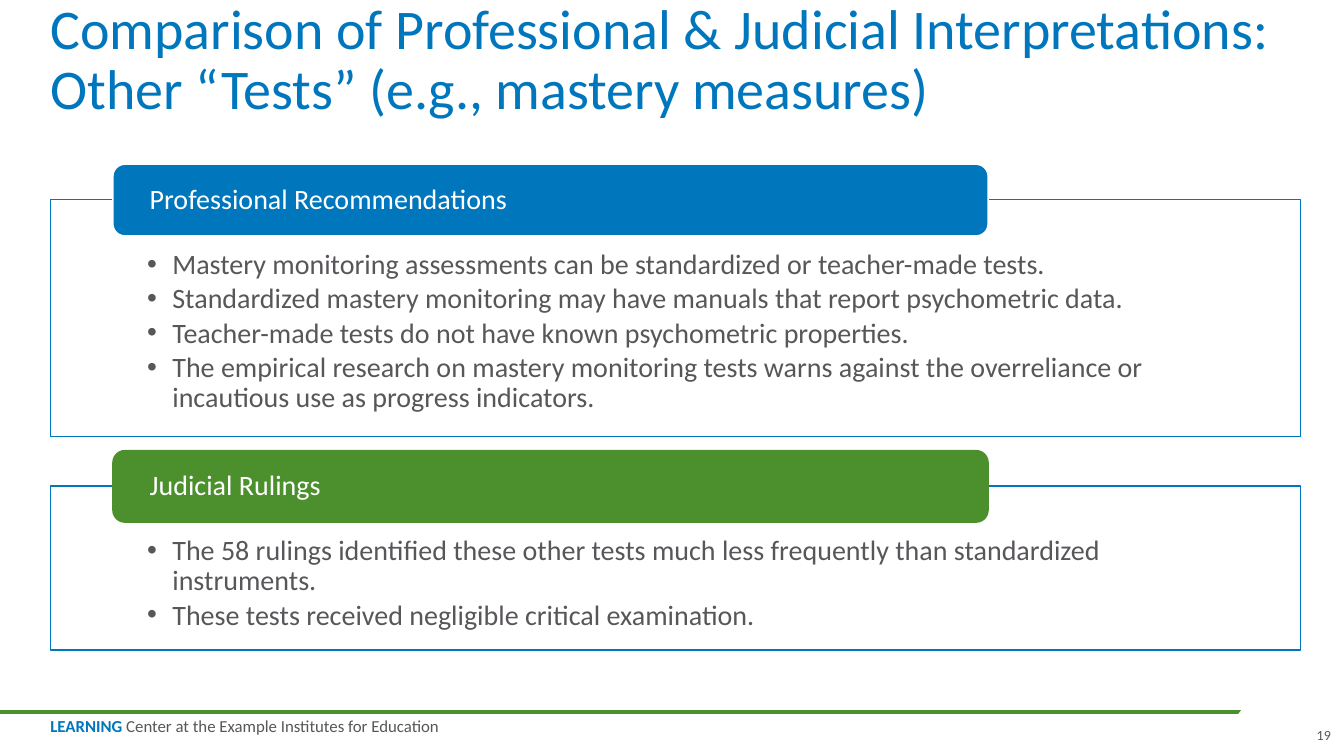
from lxml import etree
from pptx import Presentation
from pptx import util as u
from pptx.dml.color import RGBColor
from pptx.enum import shapes, text
from pptx.oxml.ns import qn

BLUE, GREEN, GRAY, WHITE = "0076BD", "4C902D", "59565A", "FFFFFF"
LEFT, WIDTH = 0.5, 12.4

SECTIONS = [
    (1.98, 2.35, "Professional Recommendations", BLUE, WHITE, [
        "Mastery monitoring assessments can be standardized or teacher-made tests.",
        "Standardized mastery monitoring may have manuals that report psychometric data.",
        "Teacher-made tests do not have known psychometric properties.",
        "The empirical research on mastery monitoring tests warns against the "
        "overreliance or incautious use as progress indicators.",
    ]),
    (4.82, 1.63, "Judicial Rulings", GREEN, GREEN, [
        "The 58 rulings identified these other tests much less frequently than "
        "standardized instruments.",
        "These tests received negligible critical examination.",
    ]),
]


def rgb(value):
    return RGBColor.from_string(value)


def set_all(target, **values):
    for name, value in values.items():
        setattr(target, name, value)


def box(x, y, w, h):
    return [u.Inches(v) for v in (x, y, w, h)]


def frame(sp, ins=(0, 0, 0, 0), anchor="TOP", wrap=True):
    tf = sp.text_frame
    left, top, right, bottom = [u.Inches(v) for v in ins]
    set_all(tf, margin_left=left, margin_top=top, margin_right=right,
            margin_bottom=bottom, word_wrap=wrap,
            vertical_anchor=getattr(text.MSO_ANCHOR, anchor))
    return tf


def write(p, runs, size, align="LEFT", spacing=0.9, after=0):
    set_all(p, alignment=getattr(text.PP_ALIGN, align), line_spacing=spacing,
            space_after=u.Pt(after))
    for words, color, bold in runs:
        r = p.add_run()
        r.text = words
        set_all(r.font, name="Calibri", size=u.Pt(size), bold=bold)
        r.font.color.rgb = rgb(color)


def add_label(s, area, runs, size, anchor="TOP", wrap=True, **style):
    sp = s.shapes.add_textbox(*box(*area))
    write(frame(sp, anchor=anchor, wrap=wrap).paragraphs[0], runs, size, **style)


def add_shape(s, kind, area, fill, line=None):
    sp = s.shapes.add_shape(getattr(shapes.MSO_SHAPE, kind), *box(*area))
    sp.shadow.inherit = False
    sp.fill.solid()
    sp.fill.fore_color.rgb = rgb(fill)
    if line:
        sp.line.color.rgb = rgb(line)
        sp.line.width = u.Pt(1)
    else:
        sp.line.fill.background()
    return sp


def add_bullet(p):
    pPr = p._p.get_or_add_pPr()
    pPr.set("marL", str(u.Inches(0.25)))
    pPr.set("indent", str(-u.Inches(0.25)))
    etree.SubElement(pPr, qn("a:buFont"), typeface="Arial")
    etree.SubElement(pPr, qn("a:buChar"), char="•")


def add_section(s, x, y, w, h, heading, color, outline, points):
    panel = add_shape(s, "RECTANGLE", (x, y, w, h), WHITE, BLUE)
    fill = panel._element.spPr.find(qn("a:solidFill"))
    etree.SubElement(fill[0], qn("a:alpha"), val="90000")
    tf = frame(panel, (0.96, 0.5, 0.96, 0.16))
    for i, point in enumerate(points):
        p = tf.add_paragraph() if i else tf.paragraphs[0]
        add_bullet(p)
        write(p, [(point, GRAY, False)], 20, after=3)
    tab = add_shape(s, "ROUNDED_RECTANGLE", (x + 0.62, y - 0.35, w * 0.7, 0.71),
                    color, outline)
    tf = frame(tab, (0.33, 0, 0.33, 0), "MIDDLE")
    write(tf.paragraphs[0], [(heading, WHITE, False)], 20)


def add_footer(s, x, y, w, h):
    rule = s.shapes.add_connector(shapes.MSO_CONNECTOR.STRAIGHT,
                                  *box(0, y, 13, y))
    rule.line.color.rgb = rgb(GREEN)
    rule.line.width = u.Pt(3)
    etree.SubElement(rule._element.spPr, qn("a:effectLst"))
    add_label(s, (x, y + 0.07, 4.02, 0.17),
              [("LEARNING", BLUE, True),
               (" Center at the Example Institutes for Education", GRAY, False)],
              12, wrap=False, spacing=0.85)
    rule_end = add_shape(s, "OVAL", (12.16, y - 0.29, 1.19, 0.58), WHITE)
    rule_end.rotation = 332.1
    add_label(s, (x + w - 0.17, y + h - 0.17, 0.17, 0.17), [("19", GRAY, False)],
              10, anchor="BOTTOM", wrap=False, align="RIGHT", spacing=1.0)


def main():
    prs = Presentation()
    set_all(prs, slide_width=u.Inches(13.33), slide_height=u.Inches(7.5))
    s = prs.slides.add_slide(prs.slide_layouts[6])
    add_label(s, (LEFT, 0, WIDTH, 1.21),
              [("Comparison of Professional & Judicial Interpretations: "
                "Other “Tests” (e.g., mastery measures)", BLUE, False)],
              40, anchor="BOTTOM")
    for y, h, *content in SECTIONS:
        add_section(s, LEFT, y, WIDTH, h, *content)
    add_footer(s, LEFT, 7.06, 12.7, 0.31)
    prs.save("out.pptx")


if __name__ == "__main__":
    main()
